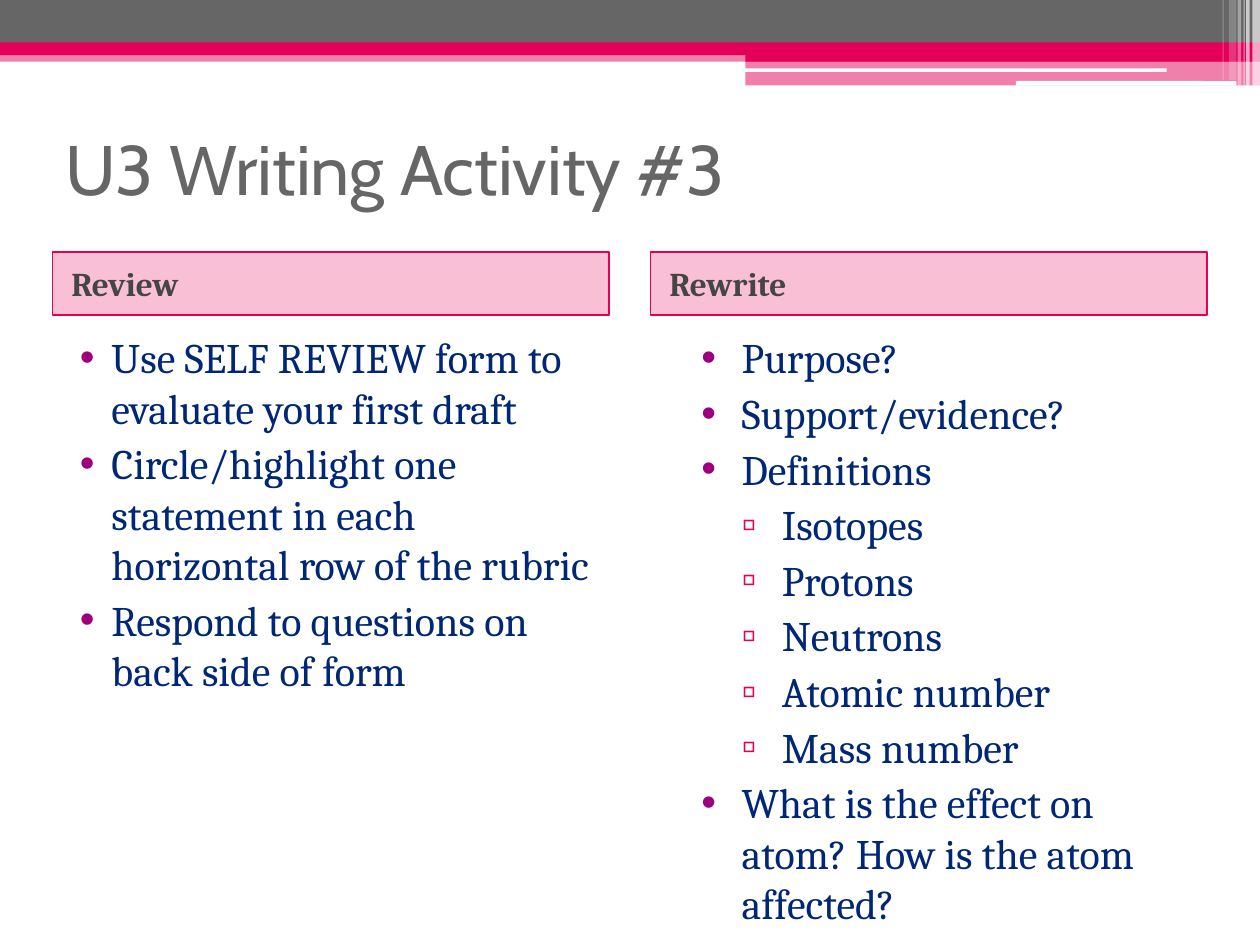
import pptx
import pptx.util
import pptx.dml.color
import pptx.enum.shapes
import pptx.enum.text
import pptx.oxml.ns
import lxml.etree

Pt = pptx.util.Pt
SHAPES = pptx.enum.shapes.MSO_SHAPE
ANCHOR = pptx.enum.text.MSO_ANCHOR

PINK = "E40059"
GREY = "666666"
WHITE = "FFFFFF"
NAVY = "002776"
PURPLE = "9C007F"
BODY_FONT = "Cambria"


def color(value):
    return pptx.dml.color.RGBColor.from_string(value)


def add_element(parent, tag, **attributes):
    return lxml.etree.SubElement(parent, pptx.oxml.ns.qn(tag), attributes)


def add_block(slide, box, fill, opacity=100, kind=SHAPES.RECTANGLE):
    shape = slide.shapes.add_shape(kind, *[Pt(length) for length in box])
    shape.shadow.inherit = False
    shape.fill.solid()
    shape.fill.fore_color.rgb = color(fill)
    shape.line.fill.background()
    if opacity < 100:
        fill_color = shape.fill._xPr.find(".//" + pptx.oxml.ns.qn("a:srgbClr"))
        add_element(fill_color, "a:alpha", val=str(opacity * 1000))
    return shape


def add_run(paragraph, text, size, font, text_color, bold=False):
    run = paragraph.add_run()
    run.text = text
    run.font.size = Pt(size)
    run.font.name = font
    run.font.bold = bold
    run.font.color.rgb = color(text_color)


def add_banner(slide, box):
    left, top, width, height = box
    right = left + width
    bands = [
        (0, 28.8, width, 6.48, PINK, 50),
        (0, 0, width, 24.48, GREY, 100),
        (0, 24.2, width, 7.3, PINK, 100),
        (426, 28, width - 426, 7.2, PINK, 100),
        (426, 34.9, width - 426, 14, PINK, 50),
    ]
    for x, y, band_width, band_height, fill, opacity in bands:
        add_block(slide, (left + x, top + y, band_width, band_height), fill, opacity)

    for x, y, bar_width, bar_height in [(425.5, 39.1, 241.2, 2), (580.5, 46.3, 126, 2.7)]:
        add_block(slide, (left + x, top + y, bar_width, bar_height), WHITE,
                  kind=SHAPES.ROUNDED_RECTANGLE)

    stripes = [
        (4.4, 4.4, height, 65),
        (7.9, 2, height, 65),
        (9.4, 0.7, height, 60),
        (12.8, 2, height, 40),
        (17.7, 4.3, 46, 20),
        (21.4, 0.7, 46, 30),
    ]
    for from_right, stripe_width, stripe_height, opacity in stripes:
        add_block(slide, (right - from_right, top, stripe_width, stripe_height),
                  WHITE, opacity)


def place_title(slide, box, text):
    title = slide.shapes.title
    title.left, title.top, title.width, title.height = [Pt(length) for length in box]
    title.text_frame.vertical_anchor = ANCHOR.MIDDLE
    title.text_frame.auto_size = pptx.enum.text.MSO_AUTO_SIZE.NONE
    paragraph = title.text_frame.paragraphs[0]
    paragraph.alignment = pptx.enum.text.PP_ALIGN.LEFT
    add_run(paragraph, text, 40, "Cabin", GREY)


def add_bullet(paragraph, left, hanging, character, bullet_color):
    properties = paragraph._p.get_or_add_pPr()
    properties.set("marL", str(Pt(left)))
    properties.set("indent", str(-Pt(hanging)))
    bullet = add_element(properties, "a:buClr")
    add_element(bullet, "a:srgbClr", val=bullet_color)
    add_element(properties, "a:buFont", typeface="Arial")
    add_element(properties, "a:buChar", char=character)


def add_column(slide, box, heading, items, indent, hanging):
    left, top, width, height = box
    header = add_block(slide, (left, top, width, 36), PINK, 25)
    header.line.color.rgb = color(PINK)
    header.line.width = Pt(1)
    header.text_frame.vertical_anchor = ANCHOR.MIDDLE
    header.text_frame.margin_left = Pt(10.8)
    paragraph = header.text_frame.paragraphs[0]
    paragraph.alignment = pptx.enum.text.PP_ALIGN.LEFT
    add_run(paragraph, heading, 19, BODY_FONT, "454545", True)

    body = slide.shapes.add_textbox(Pt(left), Pt(top + 42), Pt(width), Pt(height - 42))
    frame = body.text_frame
    frame.word_wrap = True
    for index, (level, text) in enumerate(items):
        paragraph = frame.add_paragraph() if index else frame.paragraphs[0]
        paragraph.level = level
        character, bullet_color = [("•", PURPLE), ("▫", PINK)][level]
        add_bullet(paragraph, indent + level * hanging, hanging, character, bullet_color)
        if index:
            paragraph.space_before = Pt(3)
        add_run(paragraph, text, 24, BODY_FONT, NAVY)


def main():
    presentation = pptx.Presentation()
    presentation.slide_width, presentation.slide_height = Pt(720), Pt(540)
    slide = presentation.slides.add_slide(presentation.slide_layouts[5])
    slide.background.fill.solid()
    slide.background.fill.fore_color.rgb = color(WHITE)

    add_banner(slide, (0, 0, 720, 49))
    place_title(slide, (30, 54, 660, 84), "U3 Writing Activity #3")

    review = [
        (0, "Use SELF REVIEW form to evaluate your first draft"),
        (0, "Circle/highlight one statement in each horizontal row of the rubric"),
        (0, "Respond to questions on back side of form"),
    ]
    rewrite = [
        (0, "Purpose?"),
        (0, "Support/evidence?"),
        (0, "Definitions"),
        (1, "Isotopes"),
        (1, "Protons"),
        (1, "Neutrons"),
        (1, "Atomic number"),
        (1, "Mass number"),
        (0, "What is the effect on atom? How is the atom affected?"),
    ]
    add_column(slide, (30, 144, 318, 375), "Review", review, 26.64, 18)
    add_column(slide, (371.7, 144, 318, 396), "Rewrite", rewrite, 45, 23)

    presentation.save("out.pptx")


if __name__ == "__main__":
    main()
